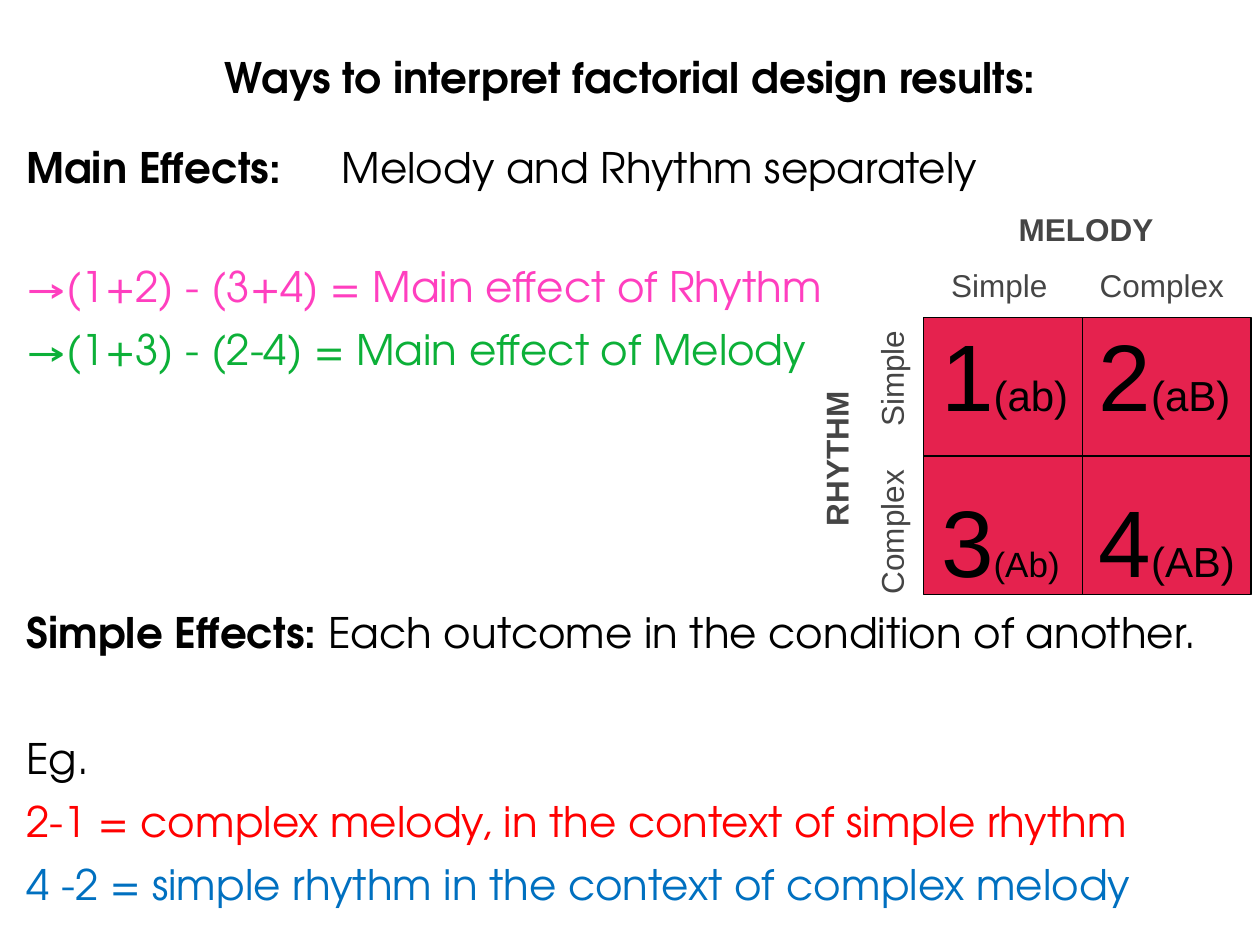
import dataclasses

import lxml.etree
import pptx
import pptx.dml.color
import pptx.enum.shapes
import pptx.enum.text
import pptx.oxml.ns
import pptx.util

COLS, ROWS = 100, 75  # layout grid over the slide
SLIDE_W, SLIDE_H = pptx.util.Inches(10), pptx.util.Inches(7.5)
CENTER = pptx.enum.text.PP_ALIGN.CENTER


@dataclasses.dataclass(frozen=True)
class Theme:
    text_font: str = "TeX Gyre Adventor"
    matrix_font: str = "Arial"
    black: str = "000000"
    white: str = "FFFFFF"
    grey: str = "454545"
    crimson: str = "E5224E"
    pink: str = "FF3FBF"
    green: str = "0CB038"
    red: str = "FF0000"
    blue: str = "0070C0"
    text: int = 24
    label: int = 18
    number: int = 54
    small: int = 20
    rule: float = 0.75


T = Theme()


def rgb(value):
    return pptx.dml.color.RGBColor.from_string(value)


def x(col):
    return int(SLIDE_W * col / COLS)


def y(row):
    return int(SLIDE_H * row / ROWS)


def box(col, row, cols, rows):
    return x(col), y(row), x(cols), y(rows)


def add_run(p, text, font, size, color, bold=False):
    r = p.add_run()
    r.text = text
    r.font.name, r.font.size, r.font.bold = font, pptx.util.Pt(size), bold
    r.font.color.rgb = rgb(color)


def next_paragraph(tf, before=0):
    """Return the empty first paragraph, or a new one with space before it."""
    first = not tf.paragraphs[0].runs
    p = tf.paragraphs[0] if first else tf.add_paragraph()
    p.space_before = pptx.util.Pt(0 if first else before)
    return p


def add_tabs(p, *cols):
    tabs = lxml.etree.SubElement(p._p.get_or_add_pPr(), pptx.oxml.ns.qn("a:tabLst"))
    for col in cols:
        lxml.etree.SubElement(tabs, pptx.oxml.ns.qn("a:tab"), pos=str(x(col)), algn="l")


def place(sp, *cells):
    sp.left, sp.top, sp.width, sp.height = box(*cells)
    sp.text_frame.word_wrap = True
    sp.text_frame.auto_size = pptx.enum.text.MSO_AUTO_SIZE.NONE
    return sp.text_frame


def add_title(slide, text):
    sp = slide.shapes.title
    tf = place(sp, 0, 0, 100, 12.6)
    sp.fill.solid()
    sp.fill.fore_color.rgb = rgb(T.white)
    tf.vertical_anchor = pptx.enum.text.MSO_ANCHOR.MIDDLE
    p = next_paragraph(tf)
    p.alignment, p.line_spacing = CENTER, 0.9
    add_run(p, text, T.text_font, T.text, T.black, True)


def add_body(slide, lines):
    """Each line is (space before, colour, bold lead, plain text, tab column)."""
    tf = place(slide.placeholders[1], 1.1, 11.2, 97.7, 63.8)
    for before, color, lead, text, tab in lines:
        p = next_paragraph(tf, before)
        p.line_spacing = 0.9
        pPr = p._p.get_or_add_pPr()
        pPr.set("marL", "0")
        pPr.set("indent", "0")
        lxml.etree.SubElement(pPr, pptx.oxml.ns.qn("a:buNone"))
        if tab:
            add_tabs(p, tab)
        if lead:
            add_run(p, lead, T.text_font, T.text, color, True)
        add_run(p, text, T.text_font, T.text, color)


def add_rule(group, x1, y1, x2, y2):
    line = group.shapes.add_connector(
        pptx.enum.shapes.MSO_CONNECTOR.STRAIGHT, x(x1), y(y1), x(x2), y(y2))
    line.line.color.rgb = rgb(T.black)
    line.line.width = pptx.util.Pt(T.rule)
    lxml.etree.SubElement(line._element.spPr, pptx.oxml.ns.qn("a:effectLst"))


def add_axis(group, cells, heading, levels, tabs, rotation=0):
    sp = group.shapes.add_textbox(*box(*cells))
    tf = place(sp, *cells)
    sp.rotation = rotation
    p = next_paragraph(tf)
    p.alignment = CENTER
    add_run(p, heading, T.matrix_font, T.label, T.grey, True)
    p = next_paragraph(tf, 10)
    add_tabs(p, *tabs)
    add_run(p, levels, T.matrix_font, T.label, T.grey)


def add_matrix(slide, left=73.3, top=25.2, width=26, height=22):
    group = slide.shapes.add_group_shape()
    sp = group.shapes.add_shape(
        pptx.enum.shapes.MSO_SHAPE.RECTANGLE, *box(left, top, width, height))
    sp.shadow.inherit = False
    sp.fill.solid()
    sp.fill.fore_color.rgb = rgb(T.crimson)
    sp.line.color.rgb = rgb(T.black)
    sp.line.width = pptx.util.Pt(T.rule)

    # Numbered conditions, one paragraph per row
    cells = (left + 0.4, top - 0.5, 28.8, 23.7)
    tf = place(group.shapes.add_textbox(*box(*cells)), *cells)
    conditions = [
        [("1", "(ab)", T.text), ("2", "(aB)", T.text)],
        [("3", "(Ab)", T.small), ("4", "(AB)", T.text)],
    ]
    for row in conditions:
        p = next_paragraph(tf, 30)
        add_tabs(p, 12.5)
        for i, (number, code, size) in enumerate(row):
            add_run(p, "\t" * i + number, T.matrix_font, T.number, T.black)
            add_run(p, code, T.matrix_font, size, T.black)

    # Dividers
    add_rule(group, left + 12.6, top, left + 12.6, top + height)
    add_rule(group, left, top + height / 2, left + width, top + height / 2)

    # Factor names and levels
    add_axis(group, (73.2, 16.2, 26, 8.6), "MELODY", "\tSimple\tComplex", (1.3, 13.1))
    add_axis(group, (56.9, 32.1, 23.5, 8.6), "RHYTHM", "Complex\tSimple", (13.3,), 270)


def main():
    prs = pptx.Presentation()
    prs.slide_width, prs.slide_height = SLIDE_W, SLIDE_H
    slide = prs.slides.add_slide(prs.slide_layouts[1])
    add_title(slide, "Ways to interpret factorial design results:")
    add_body(slide, [
        (0, T.black, "Main Effects:", "\tMelody and Rhythm separately", 21.8),
        (42, T.pink, "", "→(1+2) - (3+4) = Main effect of Rhythm", None),
        (10, T.green, "", "→(1+3) - (2-4) = Main effect of Melody", None),
        (136, T.black, "Simple Effects: ", "Each outcome in the condition of another.", None),
        (46, T.black, "", "Eg.", None),
        (10, T.red, "", "2-1 = complex melody, in the context of simple rhythm", None),
        (10, T.blue, "", "4 -2 = simple rhythm in the context of complex melody", None),
    ])
    add_matrix(slide)
    prs.save("out.pptx")


if __name__ == "__main__":
    main()
